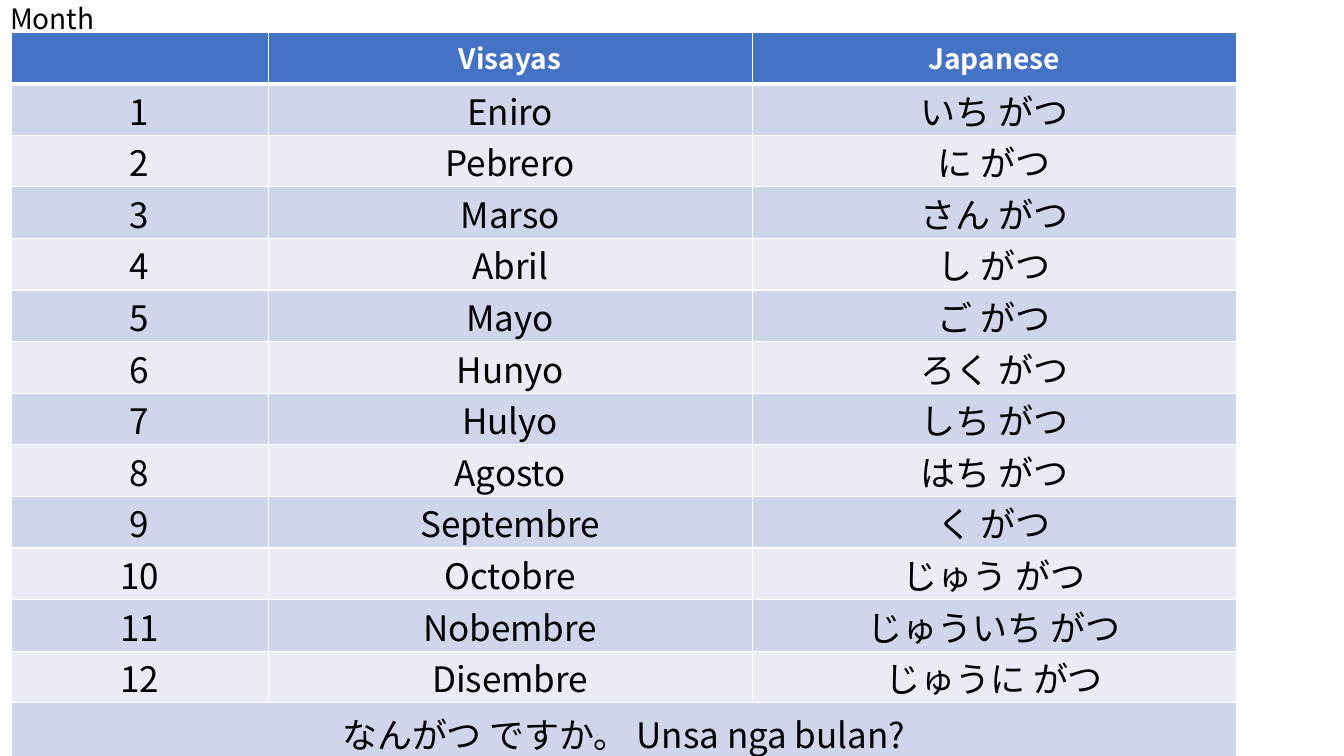
import dataclasses

import lxml.etree
import pptx
import pptx.dml.color
import pptx.enum.text
import pptx.oxml.ns
import pptx.util

FONT = "Noto Sans CJK JP"
WHITE, BLACK, BLUE = "FFFFFF", "000000", "4472C4"
BANDS = ("CFD5EA", "E9EBF5")

# Grid: table columns in steps of 0.15 inch, rows of 0.51 inch
STEP, ROW = 0.15, 0.51
COLS = (17, 32, 32)
LEFT, TOP = 0.11, 0.32
LAST = 1.1  # height of the question row, in rows

HEAD = ("", "Visayas", "Japanese")
QUERY = "なんがつ ですか。 Unsa nga bulan?"


@dataclasses.dataclass(frozen=True)
class Month:
    local: str
    kana: str


MONTHS = (
    Month("Eniro", "いち"),
    Month("Pebrero", "に"),
    Month("Marso", "さん"),
    Month("Abril", "し"),
    Month("Mayo", "ご"),
    Month("Hunyo", "ろく"),
    Month("Hulyo", "しち"),
    Month("Agosto", "はち"),
    Month("Septembre", "く"),
    Month("Octobre", "じゅう"),
    Month("Nobembre", "じゅういち"),
    Month("Disembre", "じゅうに"),
)


@dataclasses.dataclass(frozen=True)
class Look:
    size: int
    ink: str
    bold: bool = False
    tight: bool = False


TITLE = Look(20, BLACK)
TOPS = Look(20, WHITE, bold=True)
BODY = Look(25, BLACK, tight=True)
ASK = Look(25, BLACK)


def color(code: str) -> pptx.dml.color.RGBColor:
    return pptx.dml.color.RGBColor.from_string(code)


def inch(size: float) -> pptx.util.Length:
    return pptx.util.Inches(size)


def style(frame, look: Look) -> None:
    for part in frame.paragraphs:
        for run in part.runs:
            font = run.font
            font.size = pptx.util.Pt(look.size)
            font.bold = look.bold
            font.name = FONT
            font.color.rgb = color(look.ink)
            east = lxml.etree.SubElement(font._element, pptx.oxml.ns.qn("a:ea"))
            east.set("typeface", FONT)


def edge(cell, side: str, width: float) -> None:
    props = cell._tc.get_or_add_tcPr()
    line = lxml.etree.SubElement(props, pptx.oxml.ns.qn(f"a:ln{side}"))
    line.set("w", str(pptx.util.Pt(width)))
    fill = lxml.etree.SubElement(line, pptx.oxml.ns.qn("a:solidFill"))
    lxml.etree.SubElement(fill, pptx.oxml.ns.qn("a:srgbClr")).set("val", WHITE)


def fill_cell(cell, row: int, text: str, back: str, look: Look) -> None:
    # Borders come before the fill in the cell's properties
    heavy = {(0, "B"), (1, "T")}
    for side in "LRTB":
        edge(cell, side, 3 if (row, side) in heavy else 1)
    cell.fill.solid()
    cell.fill.fore_color.rgb = color(back)
    if look.tight:
        cell.margin_left = cell.margin_right = cell.margin_top = inch(0.01)
        cell.margin_bottom = 0
        cell.vertical_anchor = pptx.enum.text.MSO_ANCHOR.MIDDLE
    cell.text_frame.text = text
    cell.text_frame.paragraphs[0].alignment = pptx.enum.text.PP_ALIGN.CENTER
    style(cell.text_frame, look)


def add_title(slide, wide: int, high: int) -> None:
    title = slide.shapes.title
    title.left, title.top, title.width, title.height = 0, 0, wide, high
    frame = title.text_frame
    frame.text = "Month"
    frame.word_wrap = True
    frame.auto_size = pptx.enum.text.MSO_AUTO_SIZE.NONE
    frame.vertical_anchor = pptx.enum.text.MSO_ANCHOR.TOP
    frame.paragraphs[0].alignment = pptx.enum.text.PP_ALIGN.LEFT
    frame.paragraphs[0].line_spacing = 0.9
    style(frame, TITLE)


def add_months(slide) -> None:
    rows = [(HEAD, BLUE, TOPS)]
    for num, month in enumerate(MONTHS):
        words = (str(num + 1), month.local, f"{month.kana} がつ")
        rows.append((words, BANDS[num % 2], BODY))
    rows.append(((QUERY, "", ""), BANDS[0], ASK))

    high = ROW * (len(rows) - 1 + LAST)
    table = slide.shapes.add_table(
        len(rows), len(COLS), inch(LEFT), inch(TOP),
        inch(sum(COLS) * STEP), inch(high),
    ).table
    for col, steps in zip(table.columns, COLS):
        col.width = inch(steps * STEP)
    for row in table.rows:
        row.height = inch(ROW)
    end = len(rows) - 1
    table.rows[end].height = inch(ROW * LAST)

    for row, (words, back, look) in enumerate(rows):
        for col, text in enumerate(words):
            fill_cell(table.cell(row, col), row, text, back, look)
    table.cell(end, 0).merge(table.cell(end, len(COLS) - 1))


def main() -> None:
    deck = pptx.Presentation()
    deck.slide_width, deck.slide_height = inch(13.33), inch(7.5)
    slide = deck.slides.add_slide(deck.slide_layouts[5])
    add_title(slide, deck.slide_width, deck.slide_height)
    add_months(slide)
    deck.save("out.pptx")


if __name__ == "__main__":
    main()
